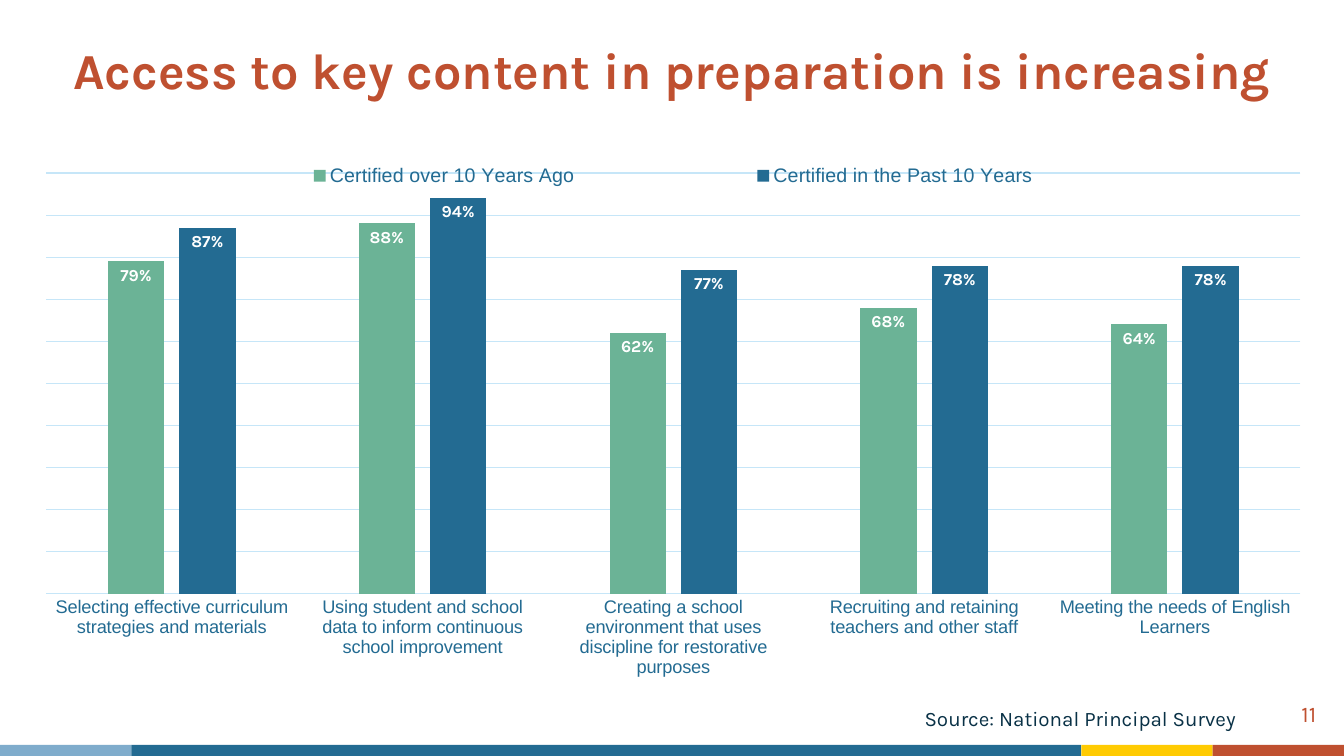
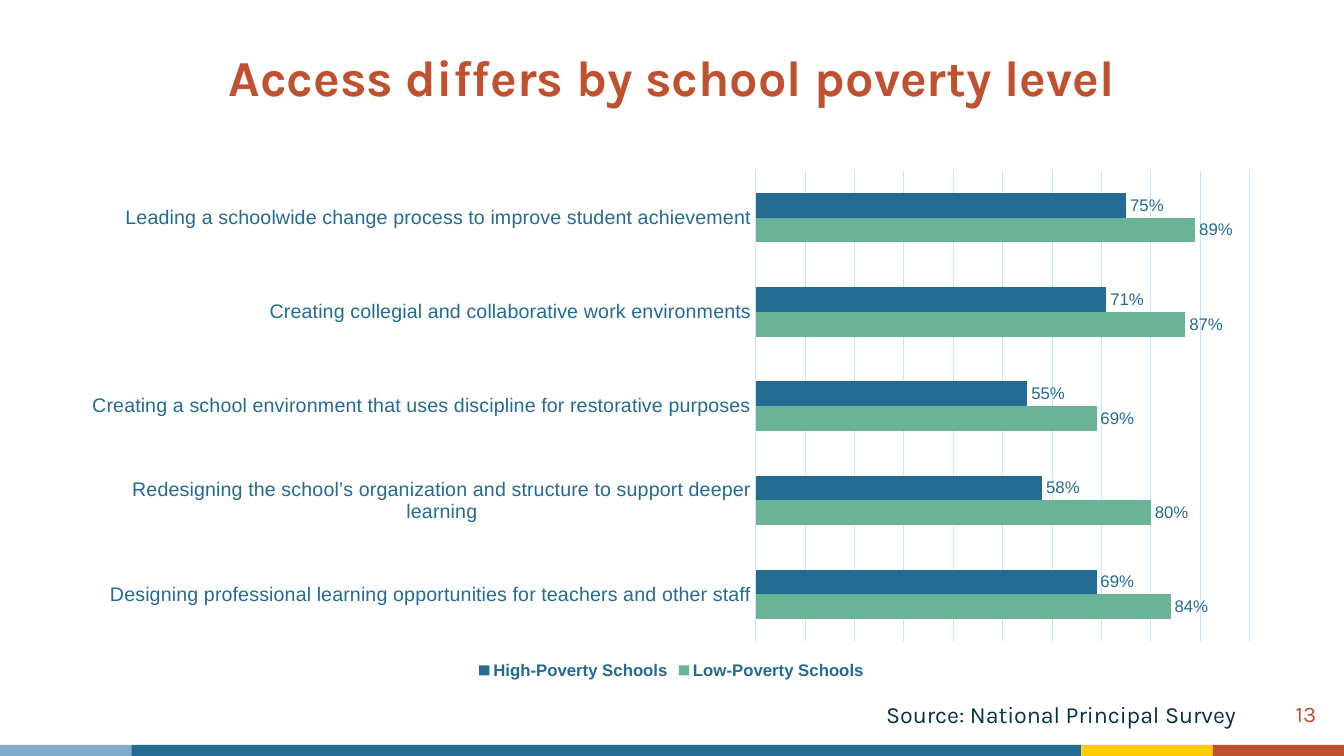
from pptx import Presentation
from pptx.chart.data import CategoryChartData
from pptx.dml.color import RGBColor
from pptx.enum.chart import XL_CHART_TYPE as Kind, XL_LABEL_POSITION as Spot
from pptx.enum.chart import XL_LEGEND_POSITION as Side, XL_TICK_MARK as Tick
from pptx.enum.shapes import MSO_SHAPE as Form
from pptx.enum.text import MSO_ANCHOR as Anchor, PP_ALIGN as Align
from pptx.oxml import parse_xml
from pptx.oxml.ns import nsdecls
from pptx.util import Cm, Pt

RUST, BLUE, GREEN = "BF5030", "236B92", "6BB396"
SKY, GOLD, NAVY, PALE, WHITE = "7FACCC", "FFCB02", "093146", "C6E6F8", "FFFFFF"
WIDE, HIGH = 33.87, 19.05
tint = RGBColor.from_string


def style(font, size, tone, face="Karla", bold=False):
    font.size, font.name, font.bold = Pt(size), face, bold
    font.color.rgb = tint(tone)


def write(slide, spot, text, size, tone, align, gap=1.0, bold=False):
    box = slide.shapes.add_textbox(*map(Cm, spot))
    frame = box.text_frame
    frame.word_wrap = True
    frame.text = text
    par = frame.paragraphs[0]
    par.alignment, par.line_spacing = align, gap
    style(par.runs[0].font, size, tone, bold=bold)
    return frame


# Content: plot and legend are x, y, width, height as shares of the chart
pages = [
    dict(
        title="Access to key content in preparation is increasing",
        head=(0, -0.08, WIDE, 3.68), head_gap=1.0, number="11",
        note=(11.66, 17.6, 19.74, 1.17), note_size=14.7, note_gap=1.1,
        kind=Kind.COLUMN_CLUSTERED, spot=(0.51, 3.07, 32.92, 14.33),
        gap=219, overlap=-27, axis_size=13,
        plot=(0.02, 0.09, 0.96, 0.74),
        side=Side.TOP, legend=(0.09, 0.06, 0.82, 0.07), key=(14, False),
        label=(12, WHITE, "Karla", True), place=Spot.INSIDE_END,
        cats=["Selecting effective curriculum strategies and materials",
              "Using student and school data to inform continuous school improvement",
              "Creating a school environment that uses discipline for restorative purposes",
              "Recruiting and retaining teachers and other staff",
              "Meeting the needs of English Learners"],
        series=[("Certified over 10 Years Ago", (0.79, 0.88, 0.62, 0.68, 0.64)),
                ("Certified in the Past 10 Years", (0.87, 0.94, 0.77, 0.78, 0.78))]),
    dict(
        title="Access differs by school poverty level",
        head=(0, 0, WIDE, 3.68), head_gap=1.1, number="13",
        note=(16.94, 17.6, 14.45, 0.97), note_size=16.6, note_gap=0.9,
        kind=Kind.BAR_CLUSTERED, spot=(1.75, 4.04, 30.35, 13.18),
        gap=182, overlap=0, axis_size=14,
        plot=(0.57, 0.02, 0.41, 0.9),
        side=Side.BOTTOM, legend=None, key=(12, True),
        label=(12, BLUE, "Arial"), place=Spot.OUTSIDE_END,
        cats=["Designing professional learning opportunities for teachers and other staff",
              "Redesigning the school’s organization and structure to support deeper learning",
              "Creating a school environment that uses discipline for restorative purposes",
              "Creating collegial and collaborative work environments",
              "Leading a schoolwide change process to improve student achievement"],
        series=[("Low-Poverty Schools", (0.84, 0.8, 0.69, 0.87, 0.89)),
                ("High-Poverty Schools", (0.69, 0.58, 0.55, 0.71, 0.75))]),
]
edges = [0, 3.31, 27.25, 30.56, WIDE]

deck = Presentation()
deck.slide_width, deck.slide_height = Cm(WIDE), Cm(HIGH)

for page in pages:
    slide = deck.slides.add_slide(deck.slide_layouts[6])

    # Footer band
    for left, right, tone in zip(edges, edges[1:], (SKY, BLUE, GOLD, RUST)):
        band = slide.shapes.add_shape(
            Form.RECTANGLE, Cm(left), Cm(HIGH - 0.28), Cm(right - left), Cm(0.28))
        band.shadow.inherit = False
        band.fill.solid()
        band.fill.fore_color.rgb = tint(tone)
        band.line.fill.background()

    # Title, page number, source
    head = write(slide, page["head"], page["title"], 36, RUST, Align.CENTER,
                 page["head_gap"], True)
    head.vertical_anchor = Anchor.MIDDLE
    number = write(slide, (31.39, 17.4, 2.03, 1.17), page["number"], 16, RUST,
                   Align.RIGHT)
    number.margin_top = number.margin_bottom = Cm(0.25)
    write(slide, page["note"], "Source: National Principal Survey",
          page["note_size"], NAVY, Align.RIGHT, page["note_gap"])

    # Chart
    data = CategoryChartData(number_format="0%")
    data.categories = page["cats"]
    for name, vals in page["series"]:
        data.add_series(name, vals)
    chart = slide.shapes.add_chart(page["kind"], *map(Cm, page["spot"]), data).chart
    chart.has_title = False
    style(chart.font, 10, BLUE, "Arial")

    # Bars and labels
    plot = chart.plots[0]
    plot.vary_by_categories = False
    plot.gap_width, plot.overlap = page["gap"], page["overlap"]
    for bars, tone in zip(plot.series, (GREEN, BLUE)):
        bars.format.fill.solid()
        bars.format.fill.fore_color.rgb = tint(tone)
        tags = bars.data_labels
        tags.show_value = True
        tags.position = page["place"]
        tags.number_format, tags.number_format_is_linked = "0%", False
        style(tags.font, *page["label"])

    # Axes
    cat, val = chart.category_axis, chart.value_axis
    cat.major_tick_mark = Tick.NONE
    style(cat.tick_labels.font, page["axis_size"], BLUE, "Arial")
    val.visible = False
    val.minimum_scale, val.maximum_scale, val.major_unit = 0, 1, 0.1
    for line in (cat.format.line, val.major_gridlines.format.line):
        line.color.rgb = tint(PALE)
        line.width = Pt(0.75)

    # Legend
    chart.has_legend = True
    legend = chart.legend
    legend.position, legend.include_in_layout = page["side"], False
    size, bold = page["key"]
    style(legend.font, size, BLUE, "Arial", bold)

    # Fixed places for plot and legend
    for tag, rank, target in (("plot", 0, '<c:layoutTarget val="inner"/>'),
                              ("legend", 1, "")):
        if not page[tag]:
            continue
        name = "plotArea" if tag == "plot" else tag
        owner = chart.element.find(".//{*}" + name)
        for old in owner.findall("{*}layout"):
            owner.remove(old)
        modes = "".join(f'<c:{k}Mode val="edge"/>' for k in "xy")
        sizes = "".join(f'<c:{k} val="{v}"/>' for k, v in zip("xywh", page[tag]))
        owner.insert(rank, parse_xml(
            f'<c:layout {nsdecls("c")}><c:manualLayout>{target}{modes}{sizes}'
            "</c:manualLayout></c:layout>"))

deck.save("out.pptx")
